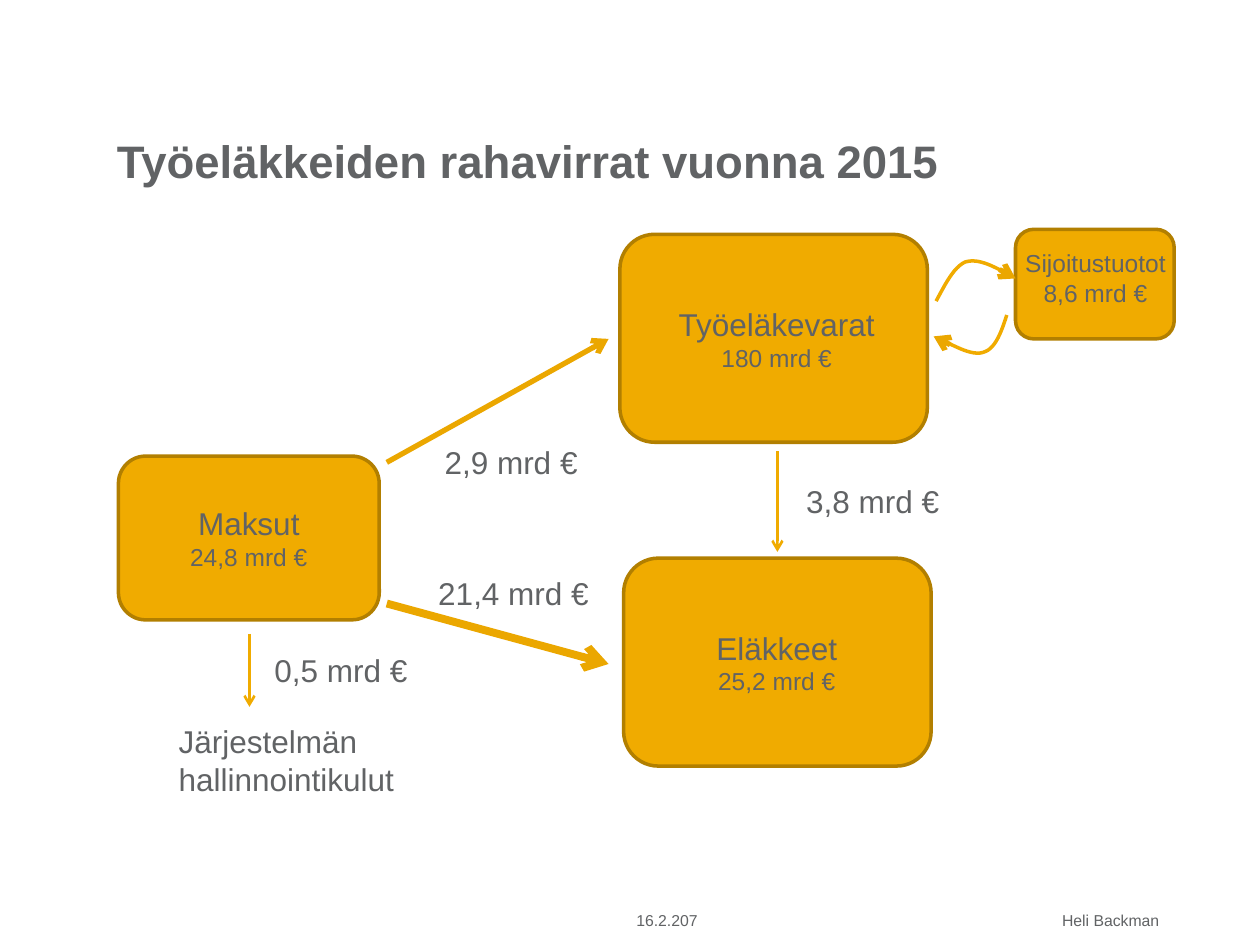
from lxml import etree
from pptx import Presentation
from pptx.dml.color import RGBColor
from pptx.enum.shapes import MSO_CONNECTOR, MSO_SHAPE
from pptx.enum.text import MSO_ANCHOR, PP_ALIGN
from pptx.oxml.ns import qn
from pptx.util import Inches, Pt

LEFT, MID, RIGHT = PP_ALIGN.LEFT, PP_ALIGN.CENTER, PP_ALIGN.RIGHT
TOP, BOTTOM = MSO_ANCHOR.TOP, MSO_ANCHOR.BOTTOM
ROUND = MSO_SHAPE.ROUNDED_RECTANGLE
STRAIGHT = MSO_CONNECTOR.STRAIGHT
GOLD, AMBER, EDGE, GREY = "F0AB00", "EBA700", "B27F00", "616365"


def color(code):
    return RGBColor.from_string(code)


def add_text(text, box, sizes=(18,), bold=False, align=LEFT, anchor=TOP, inset=True):
    frame = slide.shapes.add_textbox(*map(Inches, box)).text_frame
    frame.word_wrap = True
    frame.vertical_anchor = anchor
    if not inset:
        frame.margin_left = frame.margin_right = 0
        frame.margin_top = frame.margin_bottom = 0
    frame.text = text
    for para, size in zip(frame.paragraphs, sizes):
        para.alignment = align
        font = para.runs[0].font
        font.name, font.size, font.bold = "Arial", Pt(size), bold
        font.color.rgb = color(GREY)


deck = Presentation()
deck.slide_width, deck.slide_height = Inches(10), Inches(7.5)
slide = deck.slides.add_slide(deck.slide_layouts[6])

# Title and footer
add_text("Työeläkkeiden rahavirrat vuonna 2015", (0.83, 0.3, 8.35, 1.24),
         sizes=(26,), bold=True, anchor=BOTTOM)
add_text("16.2.207", (5.05, 7.14, 0.98, 0.24), sizes=(9,), anchor=BOTTOM, inset=False)
add_text("Heli Backman", (7.44, 7.14, 1.76, 0.24), sizes=(9,), align=RIGHT,
         anchor=BOTTOM, inset=False)

# Boxes with their captions
nodes = [
    ("Maksut\n24,8 mrd €", (0.94, 3.62, 2.07, 1.3), (1.24, 3.95, 1.47, 0.64), (18, 14)),
    ("Työeläkevarat\n180 mrd €", (4.92, 1.86, 2.44, 1.65), (5.26, 2.37, 1.81, 0.64), (18, 14)),
    ("Eläkkeet\n25,2 mrd €", (4.95, 4.43, 2.44, 1.65), (5.32, 4.94, 1.69, 0.64), (18, 14)),
    ("Sijoitustuotot\n8,6 mrd €", (8.06, 1.82, 1.26, 0.87), (8.01, 1.92, 1.37, 0.57), (14, 14)),
]
for text, box, label, sizes in nodes:
    node = slide.shapes.add_shape(ROUND, *map(Inches, box))
    node.shadow.inherit = False
    node.fill.solid()
    node.fill.fore_color.rgb = color(GOLD)
    node.line.color.rgb = color(EDGE)
    node.line.width = Pt(2)
    add_text(text, label, sizes=sizes, align=MID)

# Curves between the funds and their returns
curves = [
    [(7.43, 2.39), (7.5, 2.26), (7.57, 2.12), (7.66, 2.08),
     (7.75, 2.05), (7.86, 2.1), (7.97, 2.16)],
    [(7.99, 2.5), (7.95, 2.63), (7.9, 2.76), (7.82, 2.79),
     (7.74, 2.83), (7.62, 2.77), (7.5, 2.71)],
]
STEPS = 12
for knots in curves:
    points = []
    for first in (0, 3):
        for step in range(1, STEPS + 1):
            t = step / STEPS
            parts = ((1 - t) ** 3, 3 * t * (1 - t) ** 2, 3 * t * t * (1 - t), t ** 3)
            points.append([Inches(sum(part * knot[axis] for part, knot
                                      in zip(parts, knots[first:first + 4])))
                           for axis in (0, 1)])
    path = slide.shapes.build_freeform(*map(Inches, knots[0]))
    path.add_line_segments(points, close=False)
    curve = path.convert_to_shape()
    curve.shadow.inherit = False
    curve.fill.background()
    curve.line.color.rgb = color(GOLD)
    curve.line.width = Pt(2)

# Arrows: start, end, colour, width
arrows = [
    ((3.07, 4.79), (4.83, 5.27), AMBER, 4.5),
    ((3.07, 3.67), (4.83, 2.69), AMBER, 3),
    ((1.98, 5.03), (1.98, 5.61), GOLD, 1.5),
    ((6.17, 3.58), (6.17, 4.38), GOLD, 1.5),
    ((7.97, 2.16), (8.06, 2.21), AMBER, 3),
    ((7.49, 2.71), (7.41, 2.67), AMBER, 3),
]
for start, end, tint, width in arrows:
    arrow = slide.shapes.add_connector(STRAIGHT, *map(Inches, start + end))
    arrow.line.color.rgb = color(tint)
    arrow.line.width = Pt(width)
    etree.SubElement(arrow.line._get_or_add_ln(), qn("a:tailEnd"), type="arrow")
    etree.SubElement(arrow._element.spPr, qn("a:effectLst"))

# Labels of the flows
labels = [
    ("Järjestelmän hallinnointikulut", (1.32, 5.68, 2.83, 0.71)),
    ("2,9 mrd €", (3.43, 3.47, 1.36, 0.4)),
    ("21,4 mrd €", (3.38, 4.51, 1.54, 0.4)),
    ("0,5 mrd €", (2.08, 5.12, 1.55, 0.4)),
    ("3,8 mrd €", (6.3, 3.78, 1.55, 0.4)),
]
for text, box in labels:
    add_text(text, box)

deck.save("out.pptx")
